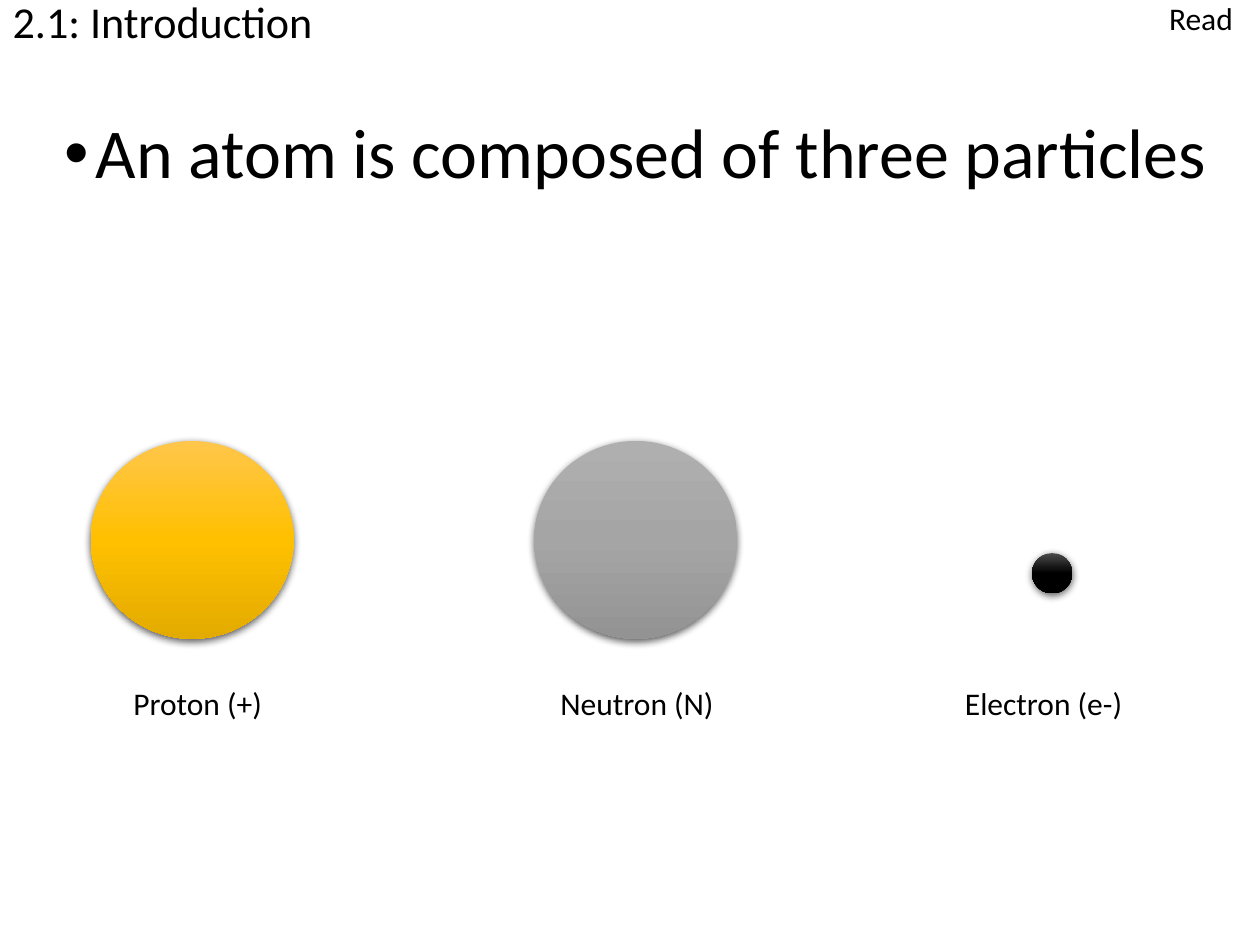
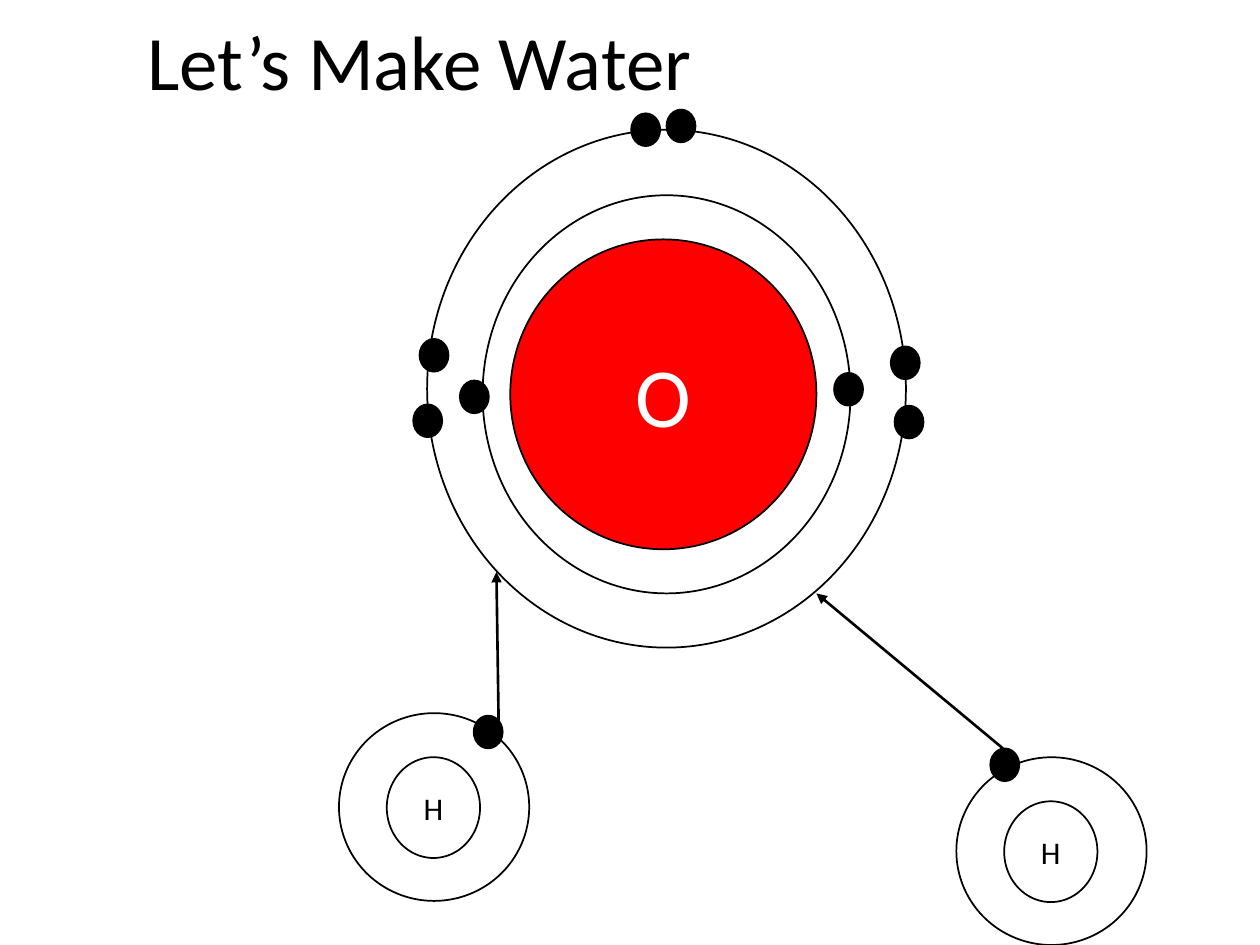
"""Build two chemistry slides: the particles of an atom and a model of water."""
from lxml import etree
from copy import deepcopy
from pptx import Presentation
from pptx.dml.color import RGBColor
from pptx.enum.shapes import MSO_CONNECTOR, MSO_SHAPE
from pptx.enum.text import MSO_ANCHOR, MSO_AUTO_SIZE, PP_ALIGN
from pptx.oxml.ns import qn
from pptx.util import Inches, Pt

OVAL, STRAIGHT = MSO_SHAPE.OVAL, MSO_CONNECTOR.STRAIGHT
MIDDLE, TOP = MSO_ANCHOR.MIDDLE, MSO_ANCHOR.TOP
LEFT, CENTER = PP_ALIGN.LEFT, PP_ALIGN.CENTER
NO_FIT = MSO_AUTO_SIZE.NONE
BLACK = RGBColor(0x00, 0x00, 0x00)
WHITE = RGBColor(0xFF, 0xFF, 0xFF)
RED = RGBColor(0xFF, 0x00, 0x00)
GOLDS = [RGBColor(0xFF, 0xC6, 0x4B), RGBColor(0xFF, 0xC0, 0x00), RGBColor(0xE3, 0xAB, 0x00)]
GRAYS = [RGBColor(0xAF, 0xAF, 0xAF), RGBColor(0xA5, 0xA5, 0xA5), RGBColor(0x93, 0x93, 0x93)]
DARKS = [RGBColor(0x4B, 0x4B, 0x4B), BLACK, BLACK]
FONT = "Calibri"
TITLE_ONLY, TITLE_AND_BODY = 5, 1
ELECTRON = (0.23, 0.26)


class Deck:
    """Hold the presentation, its style and the current page."""

    def __init__(self):
        self.show = Presentation()
        self.show.slide_width, self.show.slide_height = Inches(10), Inches(7.5)
        self.page = None

    def add_page(self, layout):
        self.page = self.show.slides.add_slide(self.show.slide_layouts[layout])

    def set_text(self, box, text, size, color=BLACK, align=LEFT, anchor=TOP, spacing=1.0):
        frame = box.text_frame
        frame_format = {"word_wrap": True, "auto_size": NO_FIT, "vertical_anchor": anchor}
        for name, value in frame_format.items():
            setattr(frame, name, value)
        para = frame.paragraphs[0]
        para_format = {"alignment": align, "line_spacing": spacing, "space_before": Pt(0)}
        for name, value in para_format.items():
            setattr(para, name, value)
        span = para.add_run()
        span.text = text
        for name, value in {"name": FONT, "size": Pt(size)}.items():
            setattr(span.font, name, value)
        span.font.color.rgb = color
        return para

    def place(self, box, left, top, width, height):
        sides = {"left": left, "top": top, "width": width, "height": height}
        for name, value in sides.items():
            setattr(box, name, Inches(value))

    def title(self, text, size, *area):
        box = self.page.shapes.title
        self.place(box, *area)
        self.set_text(box, text, size, anchor=MIDDLE, spacing=0.9)

    def bullet(self, text, size, *area):
        box = self.page.placeholders[1]
        self.place(box, *area)
        para = self.set_text(box, text, size, spacing=0.9)
        properties = para._p.get_or_add_pPr()
        properties.set("marL", str(Inches(0.25)))
        properties.set("indent", str(-Inches(0.25)))
        etree.SubElement(properties, qn("a:buFont")).set("typeface", "Arial")
        etree.SubElement(properties, qn("a:buChar")).set("char", "•")

    def label(self, text, left, top, width):
        box = self.page.shapes.add_textbox(*map(Inches, (left, top, width, 0.4)))
        self.set_text(box, text, 18)

    def oval(self, left, top, width, height, fill=None):
        shape = self.page.shapes.add_shape(OVAL, *map(Inches, (left, top, width, height)))
        shape.shadow.inherit = False
        if fill is None:
            shape.fill.background()
        else:
            shape.fill.solid()
            shape.fill.fore_color.rgb = fill
        shape.line.color.rgb = BLACK
        shape.line.width = Pt(1)
        return shape

    def nucleus(self, symbol, size, color, fill, *area):
        shape = self.oval(*area, fill=fill)
        self.set_text(shape, symbol, size, color, CENTER, MIDDLE)
        return shape

    def electron(self, left, top):
        return self.oval(left, top, *ELECTRON, fill=BLACK)

    def particle(self, colors, *area):
        shape = self.oval(*area)
        shape.line.fill.background()
        shape.fill.gradient()
        shape.fill.gradient_angle = 270
        stop_list = shape._element.spPr.find(".//" + qn("a:gsLst"))
        stop_list.append(deepcopy(stop_list[0]))
        for stop, position, color in zip(shape.fill.gradient_stops, (0, 0.5, 1), colors):
            stop.position = position
            stop.color.rgb = color
        effects = shape._element.spPr.find(qn("a:effectLst"))
        shadow = etree.SubElement(effects, qn("a:outerShdw"), blurRad=str(Pt(4.5)),
                                  dist=str(Pt(1.5)), dir="5400000", algn="ctr", rotWithShape="0")
        shade = etree.SubElement(shadow, qn("a:srgbClr"), val=str(BLACK))
        etree.SubElement(shade, qn("a:alpha"), val="63000")

    def hydrogen(self, left, top, electron_left, electron_top):
        parts = [
            self.nucleus("H", 18, BLACK, WHITE, left + 0.38, top + 0.35, 0.74, 0.8),
            self.oval(left, top, 1.51, 1.49),
            self.electron(electron_left, electron_top),
        ]
        self.page.shapes.add_group_shape(parts)

    def arrow(self, *ends):
        connector = self.page.shapes.add_connector(STRAIGHT, *map(Inches, ends))
        connector.line.color.rgb = BLACK
        connector.line.width = Pt(1.5)
        properties = connector._element.spPr
        etree.SubElement(properties.find(qn("a:ln")), qn("a:tailEnd"), type="triangle")
        etree.SubElement(properties, qn("a:effectLst"))


def add_particles(deck):
    """Show the three particles of an atom."""
    deck.add_page(TITLE_AND_BODY)
    deck.title("2.1: Introduction", 25.2, 0, 0, 8.62, 0.38)
    deck.label("Read", 9.18, -0.06, 0.82)
    deck.bullet("An atom is composed of three particles", 40, 0.41, 0.89, 9.7, 6.4)
    particles = [
        ("Proton (+)", 0.96, GOLDS, (0.72, 3.5, 1.61, 1.57)),
        ("Neutron (N)", 4.35, GRAYS, (4.24, 3.5, 1.61, 1.57)),
        ("Electron (e-)", 7.56, DARKS, (8.19, 4.39, 0.32, 0.32)),
    ]
    for name, label_left, colors, area in particles:
        deck.particle(colors, *area)
        deck.label(name, label_left, 5.38, 2.13)


def add_water(deck):
    """Show two hydrogen atoms joining one oxygen atom."""
    deck.add_page(TITLE_ONLY)
    deck.title("Let’s Make Water", 44, 1.07, 0, 8.43, 1.04)
    deck.nucleus("O", 48, WHITE, RED, 4.05, 1.9, 2.43, 2.46)
    inner_electrons = [(6.62, 2.96), (3.65, 3.02)]
    outer_electrons = [(5.01, 0.9), (5.29, 0.87), (3.33, 2.69),
                       (7.07, 2.75), (3.28, 3.21), (7.1, 3.22)]
    shells = [((3.83, 1.55, 2.92, 3.16), inner_electrons),
              ((3.39, 1.03, 3.8, 4.11), outer_electrons)]
    for area, electrons in shells:
        deck.oval(*area)
        for spot in electrons:
            deck.electron(*spot)
    deck.hydrogen(7.59, 6.01, 7.86, 5.94)
    deck.hydrogen(2.69, 5.66, 3.76, 5.68)
    deck.arrow(3.96, 5.9, 3.94, 4.54)
    deck.arrow(7.96, 5.94, 6.48, 4.71)


def main():
    """Build both pages and save the deck."""
    deck = Deck()
    add_particles(deck)
    add_water(deck)
    deck.show.save("out.pptx")


if __name__ == "__main__":
    main()
